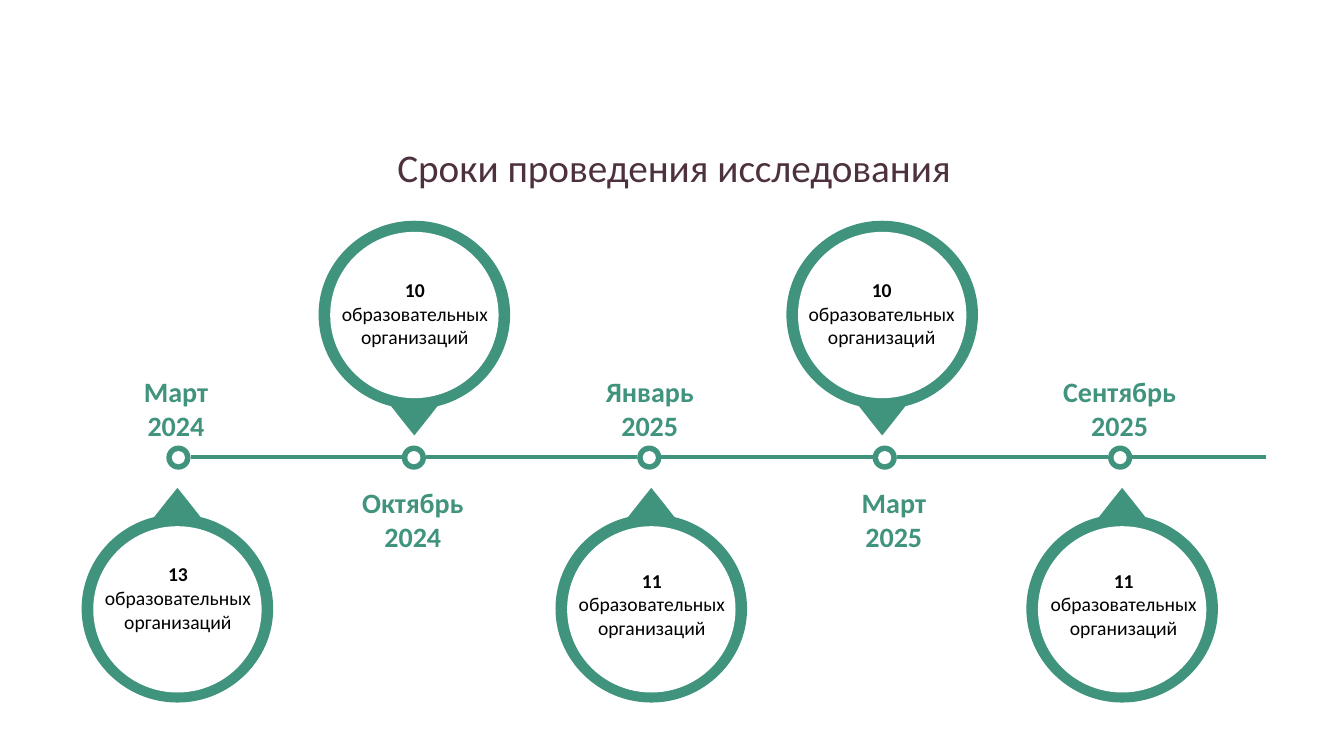
from lxml import etree
from pptx import Presentation
from pptx.dml.color import RGBColor
from pptx.enum.shapes import MSO_CONNECTOR as Connector, MSO_SHAPE as Shape
from pptx.enum.text import PP_ALIGN as Align
from pptx.oxml.ns import qn
from pptx.util import Pt

SCALE = 9144  # EMU per px, 100 px to the inch
GREEN, WHITE, BLACK, PLUM = "40937D", "FFFFFF", "000000", "4D313E"

# Timeline geometry
AXIS_Y, DOT_Y, AXIS_END = 453, 454, 1256
FIRST_DOT, DOT_STEP = 177, 233.5
DOT_RADIUS = 12
UPPER_CENTER, LOWER_CENTER = 312, 604

# Right half of a balloon around its centre: neck, then two curves of three points each
BALLOON_HALF = [(23, 91), (64, 81), (95, 44), (95, 0), (95, -51), (52, -93), (0, -93)]
BALLOON_TIP = [(-12, 105), (0, 120), (12, 105)]
CURVE_COUNT = 4

# Date, date left, organisations, count left, count top, balloon centre, balloon above the axis
STOPS = [
    ("Март\n2024", 90, "13 ", 92, 553, 176, False),
    ("Октябрь\n2024", 325, "10 ", 327, 271, 411, True),
    ("Январь 2025", 560, "11 ", 562, 559, 646, False),
    ("Март\n2025", 802, "10 ", 790, 271, 875, True),
    ("Сентябрь\n2025", 1026, "11 ", 1030, 559, 1113, False),
]


def px(length):
    return round(length * SCALE)


def color(value):
    return RGBColor.from_string(value)


def paint(shape, fill):
    shape.shadow.inherit = False
    shape.fill.solid()
    shape.fill.fore_color.rgb = color(fill)
    shape.line.fill.background()


def style_run(run, size, fill, bold):
    font = run.font
    font.name, font.size, font.bold = "Calibri", Pt(size), bold
    font.color.rgb = color(fill)


def add_text(slide, left, top, width, height, text, size, fill, bold=False):
    box = slide.shapes.add_textbox(px(left), px(top), px(width), px(height))
    frame = box.text_frame
    frame.word_wrap = True
    frame.text = text
    for paragraph in frame.paragraphs:
        paragraph.alignment = Align.CENTER
        for run in paragraph.runs:
            style_run(run, size, fill, bold)
    return frame


def add_ellipse(slide, center_x, center_y, width, height, fill):
    ellipse = slide.shapes.add_shape(
        Shape.OVAL, px(center_x - width / 2), px(center_y - height / 2), px(width), px(height))
    paint(ellipse, fill)


def add_axis_segment(slide, start, end):
    line = slide.shapes.add_connector(
        Connector.STRAIGHT, px(start), px(AXIS_Y), px(end), px(AXIS_Y))
    line.line.color.rgb = color(GREEN)
    line.line.width = Pt(3)
    etree.SubElement(line._element.spPr, qn("a:effectLst"))


def bend_segments(shape, curve_count):
    """Join the first segments, three by three, into Bézier curves."""
    segments = list(shape._element.iter(qn("a:lnTo")))
    for index in range(curve_count):
        first, *others = segments[3 * index:3 * index + 3]
        first.tag = qn("a:cubicBezTo")
        for segment in others:
            first.append(segment[0])
            segment.getparent().remove(segment)


def add_balloon(slide, center_x, above):
    center_y, direction = (UPPER_CENTER, 1) if above else (LOWER_CENTER, -1)
    left_half = [(-x, y) for x, y in reversed(BALLOON_HALF[:-1])]
    points = [(px(center_x + x), px(center_y + direction * y))
              for x, y in BALLOON_HALF + left_half + BALLOON_TIP]
    builder = slide.shapes.build_freeform(*points[0])
    builder.add_line_segments(points[1:], close=True)
    balloon = builder.convert_to_shape()
    bend_segments(balloon, CURVE_COUNT)
    paint(balloon, GREEN)
    add_ellipse(slide, center_x, center_y + 0.5, 167, 165, WHITE)


def add_count(slide, left, top, count):
    frame = add_text(slide, left, top, 169, 81, count, 14, BLACK, bold=True)
    run = frame.paragraphs[0].add_run()
    run.text = "образовательных организаций"
    style_run(run, 14, BLACK, False)


def add_dot(slide, center_x):
    for diameter, fill in ((2 * DOT_RADIUS, GREEN), (13, WHITE)):
        add_ellipse(slide, center_x, DOT_Y, diameter, diameter, fill)


def main():
    presentation = Presentation()
    presentation.slide_width, presentation.slide_height = px(1333), px(750)
    slide = presentation.slides.add_slide(presentation.slide_layouts[6])

    # Title
    title = add_text(slide, 42, 143, 1253, 45, "Сроки проведения исследования", 28, PLUM)
    title.paragraphs[0].line_spacing = 0.9

    # Axis with dots
    dots = [FIRST_DOT + DOT_STEP * index for index in range(len(STOPS))]
    ends = [dot - DOT_RADIUS for dot in dots[1:]] + [AXIS_END]
    for dot, end in zip(dots, ends):
        add_axis_segment(slide, dot + DOT_RADIUS, end)
        add_dot(slide, dot)

    # Balloons and dates
    for date, date_left, count, count_left, count_top, center_x, above in STOPS:
        add_balloon(slide, center_x, above)
        add_count(slide, count_left, count_top, count)
        date_top = 477 if above else 367
        add_text(slide, date_left, date_top, 169, 77, date, 20, GREEN, bold=True)

    presentation.save("out.pptx")


if __name__ == "__main__":
    main()
